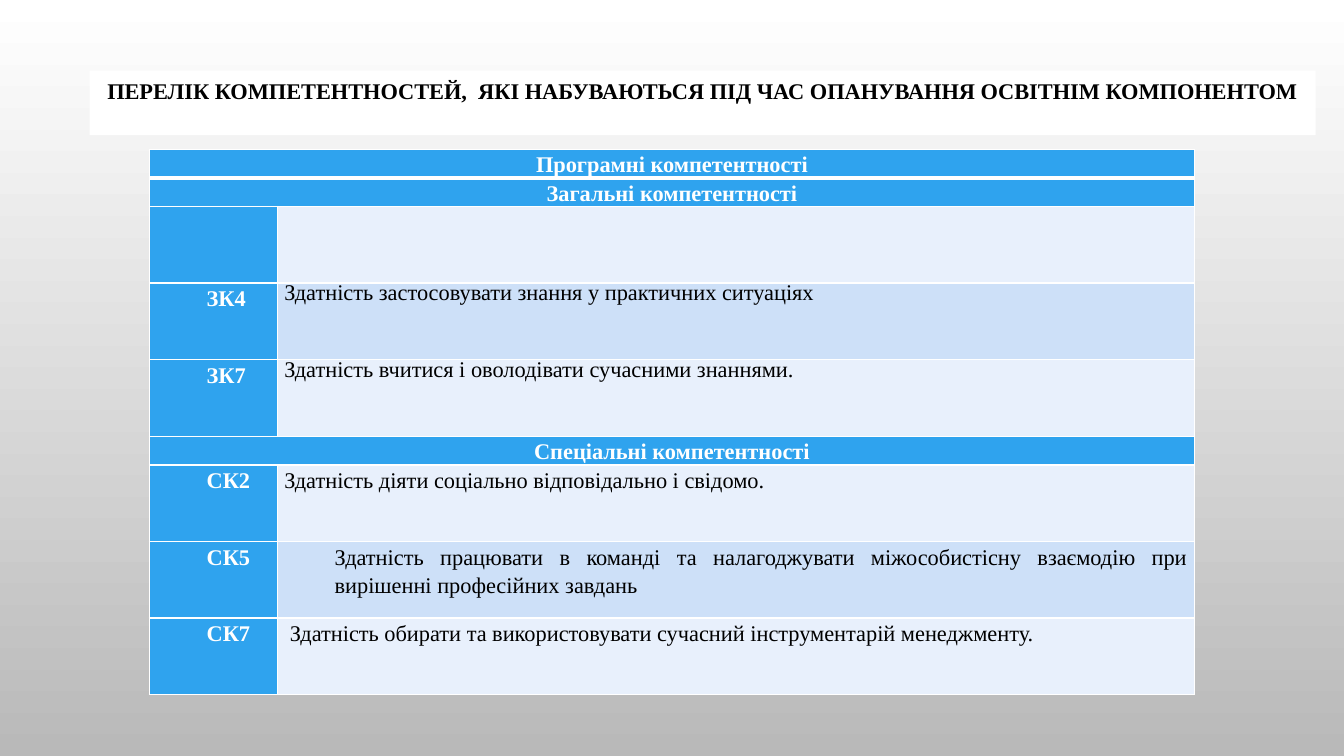
from dataclasses import dataclass

from lxml import etree
from pptx import Presentation
from pptx.dml.color import RGBColor
from pptx.enum.shapes import MSO_SHAPE
from pptx.enum.text import MSO_ANCHOR, PP_ALIGN
from pptx.oxml.ns import qn
from pptx.util import Inches, Pt

CENTER, JUSTIFY = PP_ALIGN.CENTER, PP_ALIGN.JUSTIFY
TOP = MSO_ANCHOR.TOP
RECTANGLE = MSO_SHAPE.RECTANGLE


@dataclass(frozen=True)
class Theme:
    font: str = "Times New Roman"
    size: int = 16
    white: str = "FFFFFF"
    black: str = "000000"
    backdrop_end: str = "B9B9B9"
    accent: str = "2FA3EE"
    light: str = "E8F0FC"
    band: str = "CDE0F8"
    rule: int = 1
    heavy_rule: int = 3


THEME = Theme()

TITLE = "ПЕРЕЛІК КОМПЕТЕНТНОСТЕЙ,  ЯКІ НАБУВАЮТЬСЯ ПІД ЧАС ОПАНУВАННЯ ОСВІТНІМ КОМПОНЕНТОМ"
SPACING = 1.15
TIGHT = Pt(16.1)
INDENT = 0.5
HEADING_HEIGHT, ENTRY_HEIGHT = 0.24, 0.76
CODE_WIDTH = 1.27

HEADINGS = {
    0: "Програмні компетентності",
    1: "Загальні компетентності",
    5: "Спеціальні компетентності",
}
ENTRIES = {
    2: ("", "", SPACING, 0),
    3: ("ЗК4", "Здатність застосовувати знання у практичних ситуаціях", TIGHT, 0),
    4: ("ЗК7", "Здатність вчитися і оволодівати сучасними знаннями.", TIGHT, 0),
    6: ("СК2", "Здатність діяти соціально відповідально і свідомо.", SPACING, 0),
    7: ("СК5", "Здатність працювати в команді та налагоджувати міжособистісну "
               "взаємодію при вирішенні професійних завдань", SPACING, INDENT),
    8: ("СК7", " Здатність обирати та використовувати сучасний інструментарій "
               "менеджменту.", SPACING, 0),
}


def rgb(value):
    return RGBColor.from_string(value)


def write(paragraph, text, color, bold, align):
    paragraph.alignment = align
    run = paragraph.add_run()
    run.text = text
    run.font.name = THEME.font
    run.font.size = Pt(THEME.size)
    run.font.bold = bold
    run.font.color.rgb = rgb(color)


def set_borders(cell, top, bottom):
    properties = cell._tc.get_or_add_tcPr()
    widths = {"L": THEME.rule, "R": THEME.rule, "T": top, "B": bottom}
    for side, width in widths.items():
        line = etree.SubElement(properties, qn(f"a:ln{side}"), w=str(Pt(width)))
        fill = etree.SubElement(line, qn("a:solidFill"))
        etree.SubElement(fill, qn("a:srgbClr"), val=THEME.white)


def style_cell(cell, row, color):
    set_borders(
        cell,
        THEME.heavy_rule if row == 1 else THEME.rule,
        THEME.heavy_rule if row == 0 else THEME.rule,
    )
    cell.fill.solid()
    cell.fill.fore_color.rgb = rgb(color)
    cell.margin_left = cell.margin_right = Inches(0.07)
    cell.margin_top = cell.margin_bottom = 0


def fill_cell(cell, text, color, bold, align, spacing=SPACING, indent=0):
    if not text:
        return
    paragraph = cell.text_frame.paragraphs[0]
    write(paragraph, text, color, bold, align)
    paragraph.line_spacing = spacing
    if indent:
        properties = paragraph._p.get_or_add_pPr()
        properties.set("marL", str(Inches(indent)))
        properties.set("indent", "0")


def paint_background(slide):
    fill = slide.background.fill
    fill.gradient()
    fill.gradient_angle = 270
    for stop, color in zip(fill.gradient_stops, (THEME.white, THEME.backdrop_end)):
        stop.color.rgb = rgb(color)


def add_title(slide, left, top, width, height):
    banner = slide.shapes.add_shape(
        RECTANGLE, Inches(left), Inches(top), Inches(width), Inches(height))
    banner.shadow.inherit = False
    banner.fill.solid()
    banner.fill.fore_color.rgb = rgb(THEME.white)
    banner.line.fill.background()
    frame = banner.text_frame
    frame.word_wrap = False
    frame.vertical_anchor = TOP
    frame.margin_top = Inches(0.07)
    write(frame.paragraphs[0], TITLE, THEME.black, True, CENTER)


def add_competences(slide, left, top, width):
    count = len(HEADINGS) + len(ENTRIES)
    height = len(HEADINGS) * HEADING_HEIGHT + len(ENTRIES) * ENTRY_HEIGHT
    table = slide.shapes.add_table(
        count, 2, Inches(left), Inches(top), Inches(width), Inches(height)).table
    table.horz_banding = False
    table.columns[0].width = Inches(CODE_WIDTH)
    table.columns[1].width = Inches(width - CODE_WIDTH)

    for row in range(count):
        code_cell, ability_cell = table.cell(row, 0), table.cell(row, 1)
        style_cell(code_cell, row, THEME.accent)
        if row in HEADINGS:
            table.rows[row].height = Inches(HEADING_HEIGHT)
            style_cell(ability_cell, row, THEME.accent)
            code_cell.merge(ability_cell)
            fill_cell(code_cell, HEADINGS[row], THEME.white, True, CENTER)
        else:
            table.rows[row].height = Inches(ENTRY_HEIGHT)
            code, ability, spacing, indent = ENTRIES[row]
            style_cell(ability_cell, row, THEME.band if row % 2 else THEME.light)
            fill_cell(code_cell, code, THEME.white, True, JUSTIFY, indent=INDENT)
            fill_cell(ability_cell, ability, THEME.black, False, JUSTIFY, spacing, indent)


def main():
    presentation = Presentation()
    presentation.slide_width = Inches(13.33)
    presentation.slide_height = Inches(7.5)
    slide = presentation.slides.add_slide(presentation.slide_layouts[6])
    paint_background(slide)
    add_competences(slide, 1.48, 1.48, 10.37)
    add_title(slide, 0.89, 0.7, 12.16, 0.64)
    presentation.save("out.pptx")


if __name__ == "__main__":
    main()
